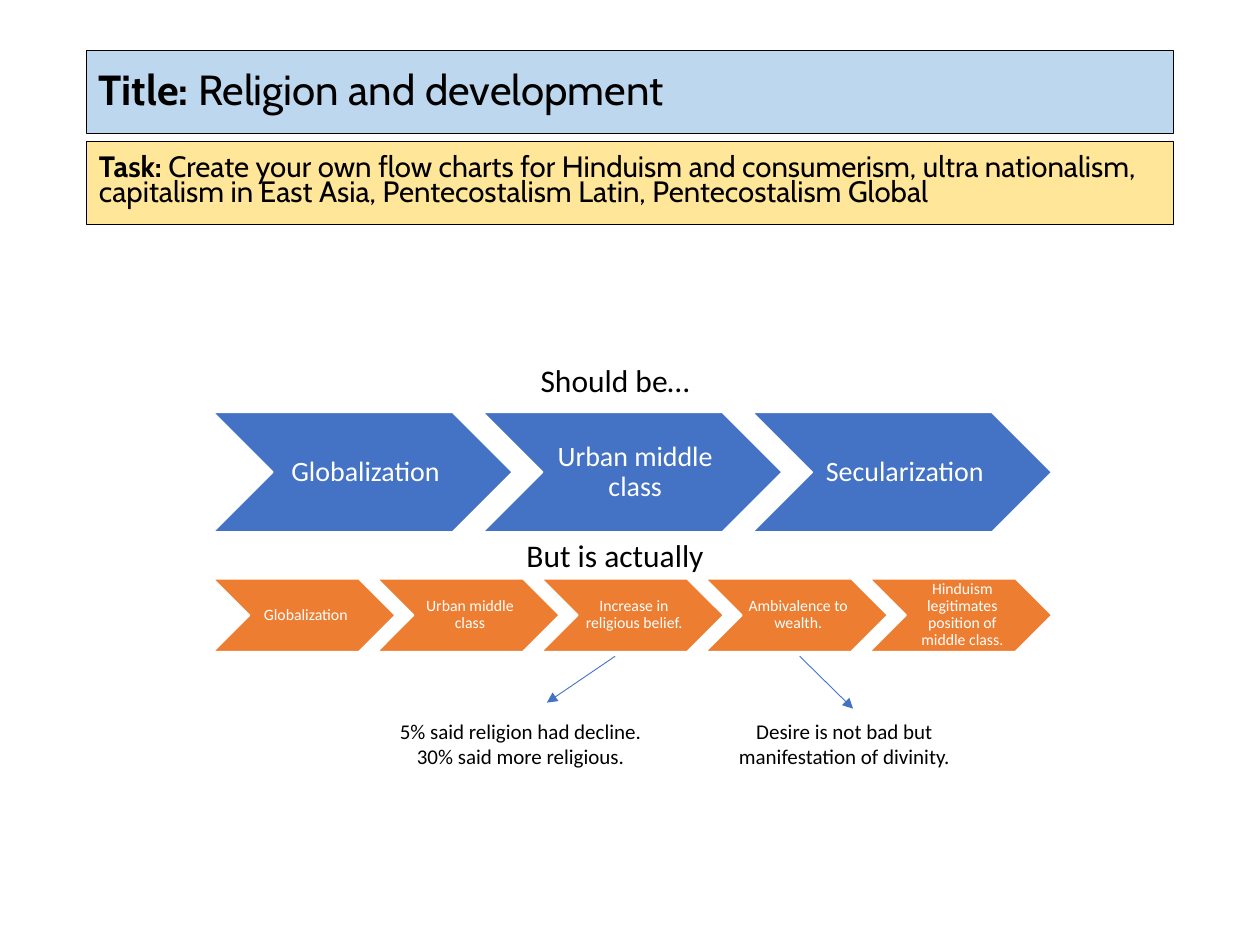
from lxml import etree
from pptx import Presentation
from pptx.dml.color import RGBColor
from pptx.enum.shapes import MSO_CONNECTOR, MSO_SHAPE
from pptx.enum.text import MSO_ANCHOR, PP_ALIGN
from pptx.oxml.ns import qn
from pptx.util import Pt

RECTANGLE = MSO_SHAPE.RECTANGLE
CHEVRON = MSO_SHAPE.CHEVRON
STRAIGHT = MSO_CONNECTOR.STRAIGHT
MIDDLE = MSO_ANCHOR.MIDDLE
LEFT = PP_ALIGN.LEFT
CENTER = PP_ALIGN.CENTER

BLACK = RGBColor(0x00, 0x00, 0x00)
WHITE = RGBColor(0xFF, 0xFF, 0xFF)
PALE_BLUE = RGBColor(0xBD, 0xD7, 0xEE)
PALE_YELLOW = RGBColor(0xFF, 0xE6, 0x99)
BLUE = RGBColor(0x44, 0x72, 0xC4)
ORANGE = RGBColor(0xED, 0x7D, 0x31)

FLOW_LEFT = 121.7
FLOW_WIDTH = 479.4
STEP_RATIO = 0.9
HEIGHT_RATIO = 0.4


class SlideBuilder:
    heading_font = "Cabin"
    body_font = "Calibri"

    def __init__(self, slide):
        self.slide = slide

    def format_paragraph(self, paragraph, font_name, size, color, alignment):
        paragraph.alignment = alignment
        paragraph.font.name = font_name
        paragraph.font.size = Pt(size)
        paragraph.font.color.rgb = color

    def filled_shape(self, kind, left, top, width, height, fill, outline, line_width):
        shape = self.slide.shapes.add_shape(
            kind, Pt(left), Pt(top), Pt(width), Pt(height))
        shape.shadow.inherit = False
        shape.fill.solid()
        shape.fill.fore_color.rgb = fill
        shape.line.color.rgb = outline
        shape.line.width = Pt(line_width)
        shape.text_frame.word_wrap = True
        shape.text_frame.vertical_anchor = MIDDLE
        return shape

    def banner(self, top, fill, label, text, size, spacing):
        shape = self.filled_shape(RECTANGLE, 49.5, top, 621, 47.5, fill, BLACK, 0.75)
        paragraph = shape.text_frame.paragraphs[0]
        self.format_paragraph(paragraph, self.heading_font, size, BLACK, LEFT)
        paragraph.line_spacing = spacing
        label_run = paragraph.add_run()
        label_run.text = label
        label_run.font.bold = True
        paragraph.add_run().text = text

    def chevron_flow(self, top, steps, fill, size):
        width = FLOW_WIDTH / (1 + STEP_RATIO * (len(steps) - 1))
        for index, step in enumerate(steps):
            left = FLOW_LEFT + index * STEP_RATIO * width
            shape = self.filled_shape(
                CHEVRON, left, top, width, HEIGHT_RATIO * width, fill, WHITE, 1)
            frame = shape.text_frame
            frame.margin_left = Pt(0.3 * size)
            frame.margin_right = frame.margin_top = frame.margin_bottom = Pt(0.1 * size)
            paragraph = frame.paragraphs[0]
            paragraph.text = step
            paragraph.line_spacing = 0.9
            self.format_paragraph(paragraph, self.body_font, size, WHITE, CENTER)

    def caption(self, left, top, width, height, lines, size):
        box = self.slide.shapes.add_textbox(Pt(left), Pt(top), Pt(width), Pt(height))
        frame = box.text_frame
        frame.word_wrap = True
        frame.text = "\n".join(lines)
        for paragraph in frame.paragraphs:
            self.format_paragraph(paragraph, self.body_font, size, BLACK, CENTER)

    def arrow(self, start_x, start_y, end_x, end_y):
        connector = self.slide.shapes.add_connector(
            STRAIGHT, Pt(start_x), Pt(start_y), Pt(end_x), Pt(end_y))
        connector.line.color.rgb = BLUE
        connector.line.width = Pt(0.5)
        properties = connector._element.spPr
        etree.SubElement(properties.find(qn("a:ln")), qn("a:tailEnd"), type="triangle")
        etree.SubElement(properties, qn("a:effectLst"))


def main():
    presentation = Presentation()
    presentation.slide_width = Pt(720)
    presentation.slide_height = Pt(540)
    builder = SlideBuilder(presentation.slides.add_slide(presentation.slide_layouts[6]))

    builder.banner(28.8, PALE_BLUE, "Title: ", "Religion and development", 24, 0.9)
    builder.banner(
        80.8, PALE_YELLOW, "Task: ",
        "Create your own flow charts for Hinduism and consumerism, ultra nationalism, "
        "capitalism in East Asia, Pentecostalism Latin, Pentecostalism Global",
        16.8, 0.7)

    builder.caption(231, 203, 241, 29, ["Should be…"], 18)
    builder.chevron_flow(
        235.6, ["Globalization", "Urban middle class", "Secularization"], BLUE, 16)

    builder.caption(231, 303, 241, 29, ["But is actually"], 18)
    builder.chevron_flow(
        330.7,
        ["Globalization", "Urban middle class", "Increase in religious belief.",
         "Ambivalence to wealth.", "Hinduism legitimates position of middle class."],
        ORANGE, 9)

    builder.arrow(351.5, 375, 312.5, 401.5)
    builder.arrow(457, 375, 487.5, 405)
    builder.caption(
        177, 406.8, 241, 36,
        ["5% said religion had decline.", "30% said more religious."], 12)
    builder.caption(
        409.5, 406.8, 146, 36,
        ["Desire is not bad but manifestation of divinity."], 12)

    presentation.save("out.pptx")


if __name__ == "__main__":
    main()
